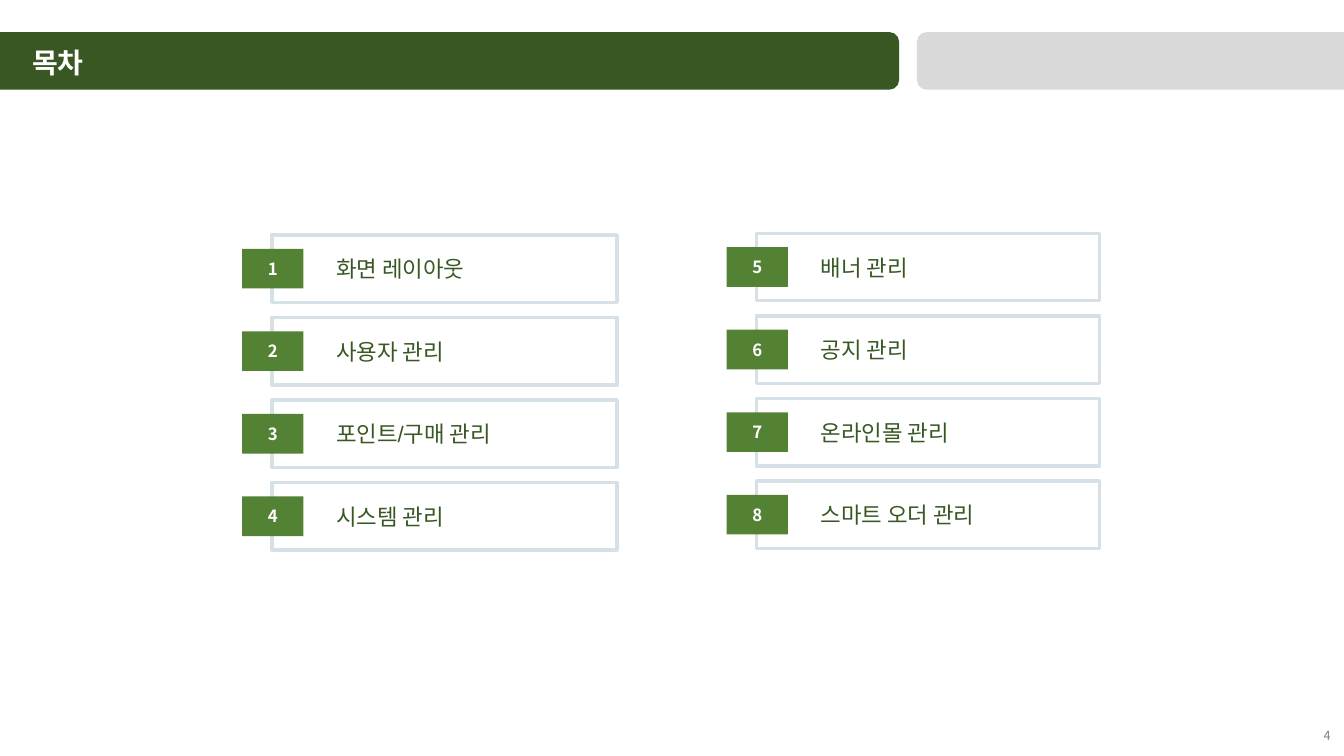
import pptx
import pptx.util
import pptx.dml.color
import pptx.enum.shapes
import pptx.enum.text
from dataclasses import dataclass

Cm = pptx.util.Cm
SHAPE = pptx.enum.shapes.MSO_SHAPE
ALIGN = pptx.enum.text.PP_ALIGN
ANCHOR = pptx.enum.text.MSO_ANCHOR


@dataclass(frozen=True)
class Theme:
    """Colours, fonts and type sizes of the deck."""
    dark: str = "385723"
    green: str = "548235"
    grey: str = "D9D9D9"
    outline: str = "D5E0E7"
    white: str = "FFFFFF"
    muted: str = "808080"
    body_font: str = "Arial"
    number_font: str = "Noto Sans CJK KR"
    title_size: int = 20
    item_size: int = 16
    badge_size: int = 12
    page_size: int = 9
    outline_width: float = 2.5


T = Theme()
LEFT_ITEMS = ["화면 레이아웃", "사용자 관리", "포인트/구매 관리", "시스템 관리"]
RIGHT_ITEMS = ["배너 관리", "공지 관리", "온라인몰 관리", "스마트 오더 관리"]


def rgb(value):
    """Turn a hex string into a colour."""
    return pptx.dml.color.RGBColor.from_string(value)


def write(sp, text, *, size, color, font=T.body_font, bold=False,
          align=ALIGN.LEFT, anchor=ANCHOR.MIDDLE, indent=0.25):
    """Put one formatted line of text into a shape."""
    tf = sp.text_frame
    tf.word_wrap = True
    tf.vertical_anchor = anchor
    tf.margin_left = Cm(indent)
    p = tf.paragraphs[0]
    p.alignment = align
    r = p.add_run()
    r.text = text
    r.font.name = font
    r.font.size = pptx.util.Pt(size)
    r.font.bold = bold
    r.font.color.rgb = rgb(color)


def add_box(s, x, y, w, h, fill, line=None, kind=SHAPE.RECTANGLE):
    """Add a flat filled shape, outlined if a line colour is given."""
    sp = s.shapes.add_shape(kind, Cm(x), Cm(y), Cm(w), Cm(h))
    sp.shadow.inherit = False
    sp.fill.solid()
    sp.fill.fore_color.rgb = rgb(fill)
    if line:
        sp.line.color.rgb = rgb(line)
        sp.line.width = pptx.util.Pt(T.outline_width)
    else:
        sp.line.fill.background()
    return sp


def add_header(s, x, y, w, h, title):
    """Draw the title bar and the grey bar beside it."""
    gap, title_w = 0.45, 22.94
    grey_x = x + title_w + gap
    add_box(s, x, y, title_w, h, T.dark, kind=SHAPE.ROUNDED_RECTANGLE)
    add_box(s, grey_x, y, x + w - grey_x, h, T.grey, kind=SHAPE.ROUNDED_RECTANGLE)
    tb = s.shapes.add_textbox(Cm(x + 0.84), Cm(y + 0.21), Cm(10.16), Cm(1.12))
    write(tb, title, size=T.title_size, color=T.white, bold=True, anchor=ANCHOR.TOP)


def add_contents(s, x, y, w, items, first):
    """Draw a column of numbered entries from the given number on."""
    row_h, pitch, badge_w, badge_h, overhang = 1.7, 2.08, 1.55, 1, 0.75
    for i, item in enumerate(items):
        top = y + i * pitch
        sp = add_box(s, x + overhang, top, w - overhang, row_h, T.white, T.outline)
        write(sp, item, size=T.item_size, color=T.dark, indent=1.62)
        sp = add_box(s, x, top + (row_h - badge_h) / 2, badge_w, badge_h, T.green)
        write(sp, str(first + i), size=T.badge_size, color=T.white,
              font=T.number_font, bold=True, align=ALIGN.CENTER)


def add_page_number(s, x, y, w, h, number):
    """Write the page number at the right of its box."""
    tb = s.shapes.add_textbox(Cm(x), Cm(y), Cm(w), Cm(h))
    write(tb, str(number), size=T.page_size, color=T.muted,
          font=T.number_font, align=ALIGN.RIGHT)


def main():
    """Build the contents slide and save it."""
    prs = pptx.Presentation()
    prs.slide_width, prs.slide_height = Cm(33.87), Cm(19.05)
    s = prs.slides.add_slide(prs.slide_layouts[6])
    add_header(s, -0.28, 0.81, 34.41, 1.45, "목차")
    add_contents(s, 6.1, 5.92, 9.45, LEFT_ITEMS, 1)
    add_contents(s, 18.31, 5.88, 9.4, RIGHT_ITEMS, 1 + len(LEFT_ITEMS))
    add_page_number(s, 26.16, 18.03, 7.62, 1.02, 4)
    prs.save("out.pptx")


if __name__ == "__main__":
    main()
